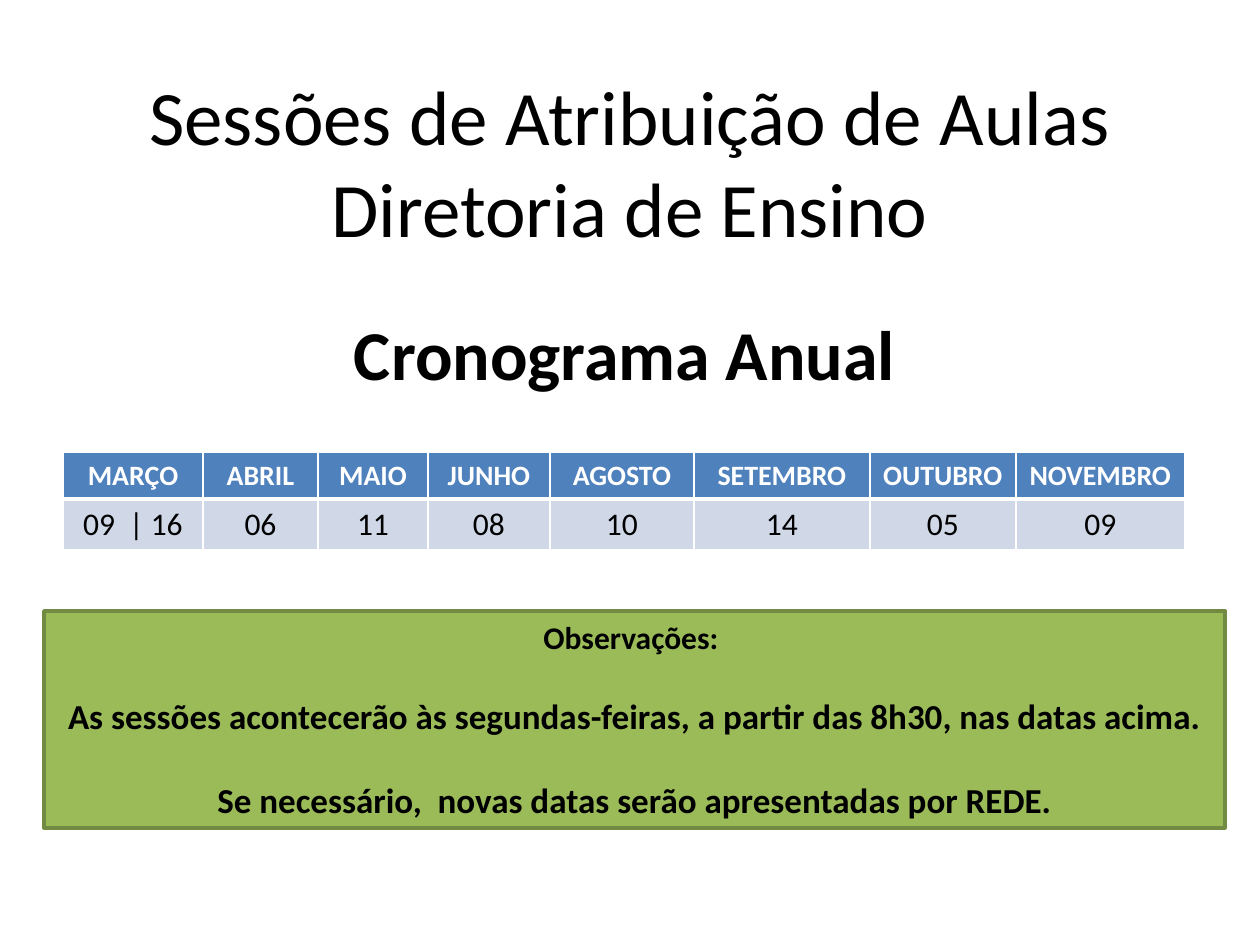
from lxml.etree import SubElement
from pptx import Presentation
from pptx.dml.color import RGBColor
from pptx.enum.shapes import MSO_SHAPE
from pptx.enum.text import MSO_ANCHOR, MSO_AUTO_SIZE, PP_ALIGN
from pptx.oxml.ns import qn
from pptx.util import Pt

EMU_PER_PX = 914400 / 126
FONT = "Calibri"
COLORS = {
    "text": "000000",
    "white": "FFFFFF",
    "header": "4F81BD",
    "dates": "D0D8E8",
    "notes": "9BBB59",
    "notes_line": "738A42",
}
SCHEDULE = [
    ("MARÇO", "09  | 16", 140),
    ("ABRIL", "06", 115),
    ("MAIO", "11", 110),
    ("JUNHO", "08", 122),
    ("AGOSTO", "10", 144),
    ("SETEMBRO", "14", 176),
    ("OUTUBRO", "05", 146),
    ("NOVEMBRO", "09", 169),
]
ROW_HEIGHTS = [46, 51]
NOTES = [
    ("Observações: ", 18, 0),
    ("As sessões acontecerão às segundas-feiras, a partir das 8h30, nas datas acima.", 20, 22),
    ("Se necessário,  novas datas serão apresentadas por REDE.", 20, 24),
]


def px(length):
    return round(length * EMU_PER_PX)


def box(left, top, width, height):
    return [px(length) for length in (left, top, width, height)]


def rgb(name):
    return RGBColor.from_string(COLORS[name])


def style(paragraph, size, bold=False, color="text"):
    paragraph.alignment = PP_ALIGN.CENTER
    paragraph.font.name = FONT
    paragraph.font.size = Pt(size)
    paragraph.font.bold = bold
    paragraph.font.color.rgb = rgb(color)


def set_title(slide):
    title = slide.shapes.title
    title.left, title.top, title.width, title.height = box(63, 38, 1134, 246)
    frame = title.text_frame
    frame.text = "Sessões de Atribuição de Aulas\vDiretoria de Ensino"
    frame.auto_size = MSO_AUTO_SIZE.NONE
    frame.vertical_anchor = MSO_ANCHOR.MIDDLE
    style(frame.paragraphs[0], 44)


def add_subtitle(slide):
    frame = slide.shapes.add_textbox(*box(74, 304, 1101, 97)).text_frame
    frame.word_wrap = True
    frame.auto_size = MSO_AUTO_SIZE.SHAPE_TO_FIT_TEXT
    frame.text = "Cronograma Anual"
    style(frame.paragraphs[0], 40, bold=True)


def set_borders(cell, widths):
    properties = cell._tc.get_or_add_tcPr()
    for side, width in zip("LRTB", widths):
        line = SubElement(properties, qn(f"a:ln{side}"), w=str(Pt(width)))
        fill = SubElement(line, qn("a:solidFill"))
        SubElement(fill, qn("a:srgbClr"), val=COLORS["white"])


def fill_cell(cell, text, fill, borders, **font):
    cell.text = text
    style(cell.text_frame.paragraphs[0], **font)
    set_borders(cell, borders)
    cell.fill.solid()
    cell.fill.fore_color.rgb = rgb(fill)


def add_schedule(slide):
    total_width = sum(width for _, _, width in SCHEDULE)
    area = box(63, 452, total_width, sum(ROW_HEIGHTS))
    schedule = slide.shapes.add_table(2, len(SCHEDULE), *area).table
    for row, height in zip(schedule.rows, ROW_HEIGHTS):
        row.height = px(height)
    for column, (month, dates, width) in enumerate(SCHEDULE):
        schedule.columns[column].width = px(width)
        fill_cell(schedule.cell(0, column), month, "header", (1, 1, 1, 3),
                  size=16, bold=True, color="white")
        fill_cell(schedule.cell(1, column), dates, "dates", (1, 1, 3, 1), size=18)


def add_notes(slide):
    panel = slide.shapes.add_shape(MSO_SHAPE.RECTANGLE, *box(44, 611, 1181, 217))
    panel.shadow.inherit = False
    panel.fill.solid()
    panel.fill.fore_color.rgb = rgb("notes")
    panel.line.color.rgb = rgb("notes_line")
    panel.line.width = Pt(2)
    frame = panel.text_frame
    frame.word_wrap = True
    frame.auto_size = MSO_AUTO_SIZE.SHAPE_TO_FIT_TEXT
    frame.vertical_anchor = MSO_ANCHOR.MIDDLE
    frame.text = "\n".join(text for text, _, _ in NOTES)
    for paragraph, (_, size, gap) in zip(frame.paragraphs, NOTES):
        style(paragraph, size, bold=True)
        paragraph.space_before = Pt(gap)


def main():
    presentation = Presentation()
    presentation.slide_width = px(1260)
    presentation.slide_height = px(945)
    slide = presentation.slides.add_slide(presentation.slide_layouts[5])
    set_title(slide)
    add_schedule(slide)
    add_subtitle(slide)
    add_notes(slide)
    presentation.save("out.pptx")


if __name__ == "__main__":
    main()
